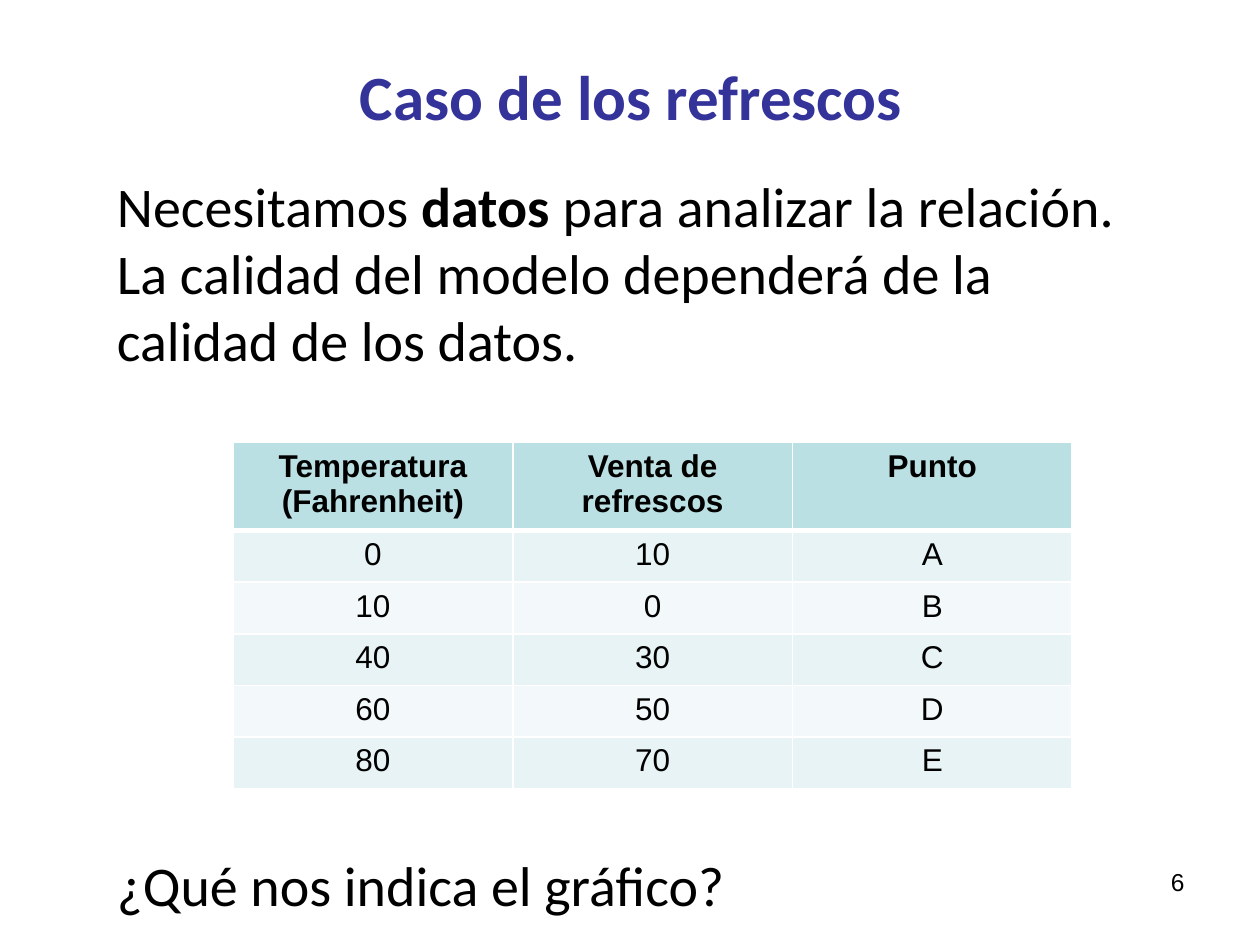
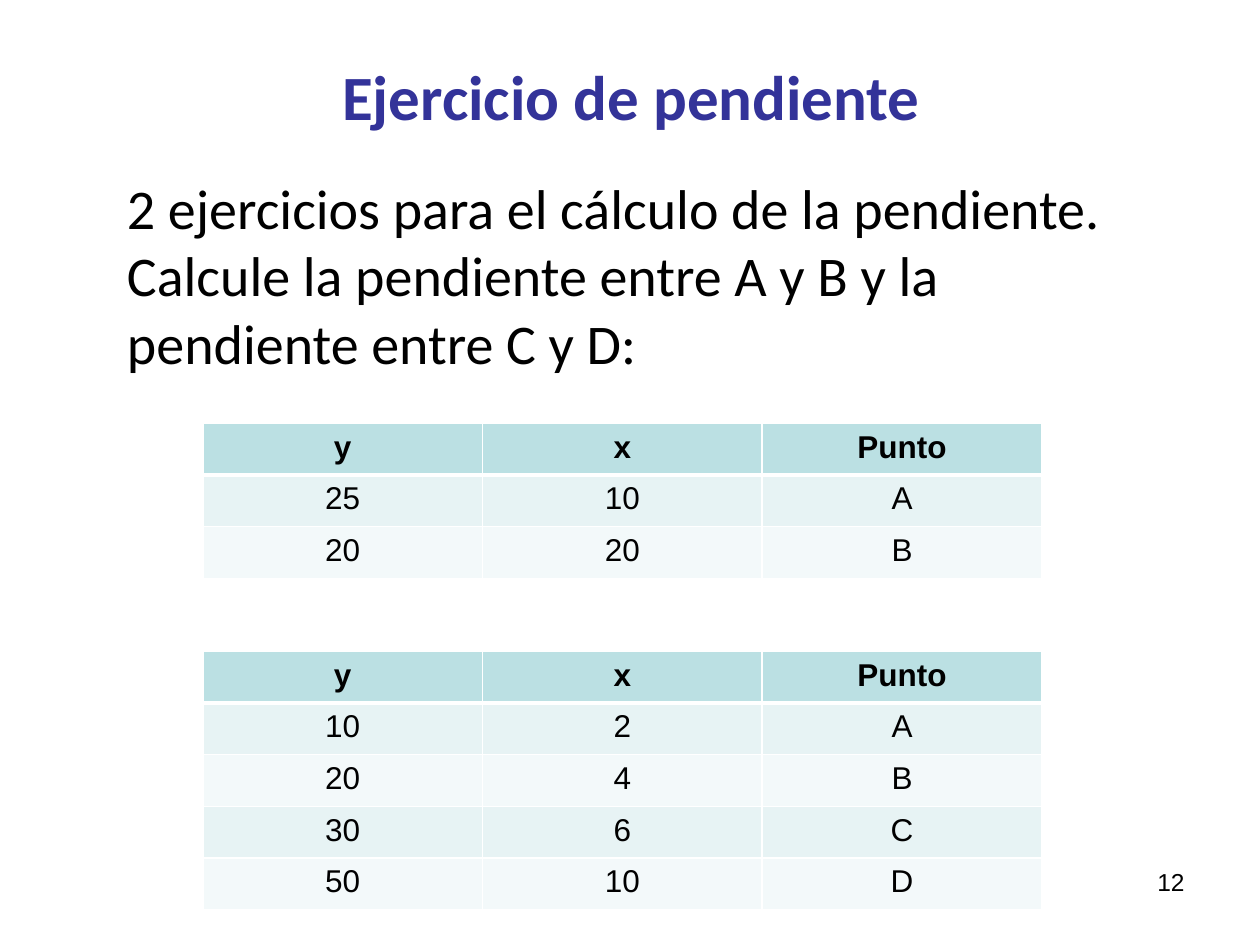
from dataclasses import dataclass

from lxml import etree
from pptx import Presentation
from pptx.dml.color import RGBColor
from pptx.enum.text import MSO_ANCHOR, PP_ALIGN
from pptx.oxml.ns import qn
from pptx.util import Inches, Pt

LEFT, CENTER, RIGHT = PP_ALIGN.LEFT, PP_ALIGN.CENTER, PP_ALIGN.RIGHT
TOP, MIDDLE = MSO_ANCHOR.TOP, MSO_ANCHOR.MIDDLE
BLANK_LAYOUT = 6
COLORS = {
    "title": "333399",
    "text": "000000",
    "header": "BBE0E3",
    "odd_row": "E7F3F4",
    "even_row": "F3F9FA",
    "border": "FFFFFF",
}
HEADING_FONT, TABLE_FONT = "Calibri", "Arial"
BODY_SIZE = 32
COLUMN_WIDTH, ROW_HEIGHT = 2.22, 0.41
THIN, THICK = 1, 3


@dataclass(frozen=True)
class Span:
    text: str
    bold: bool = False


@dataclass(frozen=True)
class BodyParagraph:
    spans: list[Span]
    space_before: float = 0


@dataclass(frozen=True)
class DataTable:
    left: float
    top: float
    rows: list[tuple[str, ...]]


@dataclass(frozen=True)
class Page:
    number: str
    title: str
    body_left: float
    body_top: float
    body: list[BodyParagraph]
    tables: list[DataTable]


PAGES = [
    Page(
        "6", "Caso de los refrescos", 0.83, 1.31,
        [
            BodyParagraph([
                Span("Necesitamos "),
                Span("datos", bold=True),
                Span(" para analizar la relación. La calidad del modelo "
                     "dependerá de la calidad de los datos."),
            ]),
            BodyParagraph([Span("¿Qué nos indica el gráfico?")], space_before=273),
        ],
        [
            DataTable(1.85, 3.51, [
                ("Temperatura (Fahrenheit)", "Venta de refrescos", "Punto"),
                ("0", "10", "A"),
                ("10", "0", "B"),
                ("40", "30", "C"),
                ("60", "50", "D"),
                ("80", "70", "E"),
            ]),
        ],
    ),
    Page(
        "12", "Ejercicio de pendiente", 0.91, 1.33,
        [
            BodyParagraph([
                Span("2 ejercicios para el cálculo de la pendiente. Calcule la "
                     "pendiente entre A y B y la pendiente entre C y D:"),
            ]),
        ],
        [
            DataTable(1.61, 3.36, [
                ("y", "x", "Punto"),
                ("25", "10", "A"),
                ("20", "20", "B"),
            ]),
            DataTable(1.61, 5.17, [
                ("y", "x", "Punto"),
                ("10", "2", "A"),
                ("20", "4", "B"),
                ("30", "6", "C"),
                ("50", "10", "D"),
            ]),
        ],
    ),
]


def write_span(para, text: str, *, size: float, font: str = HEADING_FONT,
               color: str = "text", bold: bool = False, align=LEFT) -> None:
    para.alignment = align
    run = para.add_run()
    run.text = text
    run.font.size = Pt(size)
    run.font.name = font
    run.font.bold = bold
    run.font.color.rgb = RGBColor.from_string(COLORS[color])


def add_frame(slide, left: float, top: float, width: float, height: float,
              anchor=TOP):
    box = slide.shapes.add_textbox(
        Inches(left), Inches(top), Inches(width), Inches(height))
    frame = box.text_frame
    frame.word_wrap = True
    frame.vertical_anchor = anchor
    return frame


def add_body(slide, page: Page) -> None:
    frame = add_frame(slide, page.body_left, page.body_top, 8.44, 5.91)
    for index, item in enumerate(page.body):
        para = frame.add_paragraph() if index else frame.paragraphs[0]
        para.space_before = Pt(item.space_before)
        for span in item.spans:
            write_span(para, span.text, size=BODY_SIZE, bold=span.bold)


def set_borders(cell, top: float, bottom: float) -> None:
    properties = cell._tc.get_or_add_tcPr()
    widths = {"a:lnL": THIN, "a:lnR": THIN, "a:lnT": top, "a:lnB": bottom}
    for position, (tag, width) in enumerate(widths.items()):
        line = etree.Element(qn(tag), w=str(Pt(width)))
        fill = etree.SubElement(line, qn("a:solidFill"))
        etree.SubElement(fill, qn("a:srgbClr"), val=COLORS["border"])
        properties.insert(position, line)


def row_color(row_index: int) -> str:
    if row_index == 0:
        return "header"
    return "odd_row" if row_index % 2 else "even_row"


def add_data_table(slide, data: DataTable) -> None:
    row_count, column_count = len(data.rows), len(data.rows[0])
    table = slide.shapes.add_table(
        row_count, column_count, Inches(data.left), Inches(data.top),
        Inches(COLUMN_WIDTH * column_count), Inches(ROW_HEIGHT * row_count)).table
    for column in table.columns:
        column.width = Inches(COLUMN_WIDTH)
    for row_index, values in enumerate(data.rows):
        table.rows[row_index].height = Inches(ROW_HEIGHT)
        for column_index, value in enumerate(values):
            cell = table.cell(row_index, column_index)
            cell.fill.solid()
            cell.fill.fore_color.rgb = RGBColor.from_string(
                COLORS[row_color(row_index)])
            set_borders(cell,
                        top=THICK if row_index == 1 else THIN,
                        bottom=THICK if row_index == 0 else THIN)
            write_span(cell.text_frame.paragraphs[0], value, size=18,
                       font=TABLE_FONT, bold=row_index == 0, align=CENTER)


def add_page(deck, page: Page) -> None:
    slide = deck.slides.add_slide(deck.slide_layouts[BLANK_LAYOUT])
    number = add_frame(slide, 7.17, 6.83, 2.33, 0.52)
    write_span(number.paragraphs[0], page.number, size=14, font=TABLE_FONT,
               align=RIGHT)
    title = add_frame(slide, 0.51, 0.13, 9, 1.25, anchor=MIDDLE)
    write_span(title.paragraphs[0], page.title, size=36, color="title",
               bold=True, align=CENTER)
    add_body(slide, page)
    for data in page.tables:
        add_data_table(slide, data)


def main() -> None:
    deck = Presentation()
    deck.slide_width, deck.slide_height = Inches(10), Inches(7.5)
    for page in PAGES:
        add_page(deck, page)
    deck.save("out.pptx")


if __name__ == "__main__":
    main()
